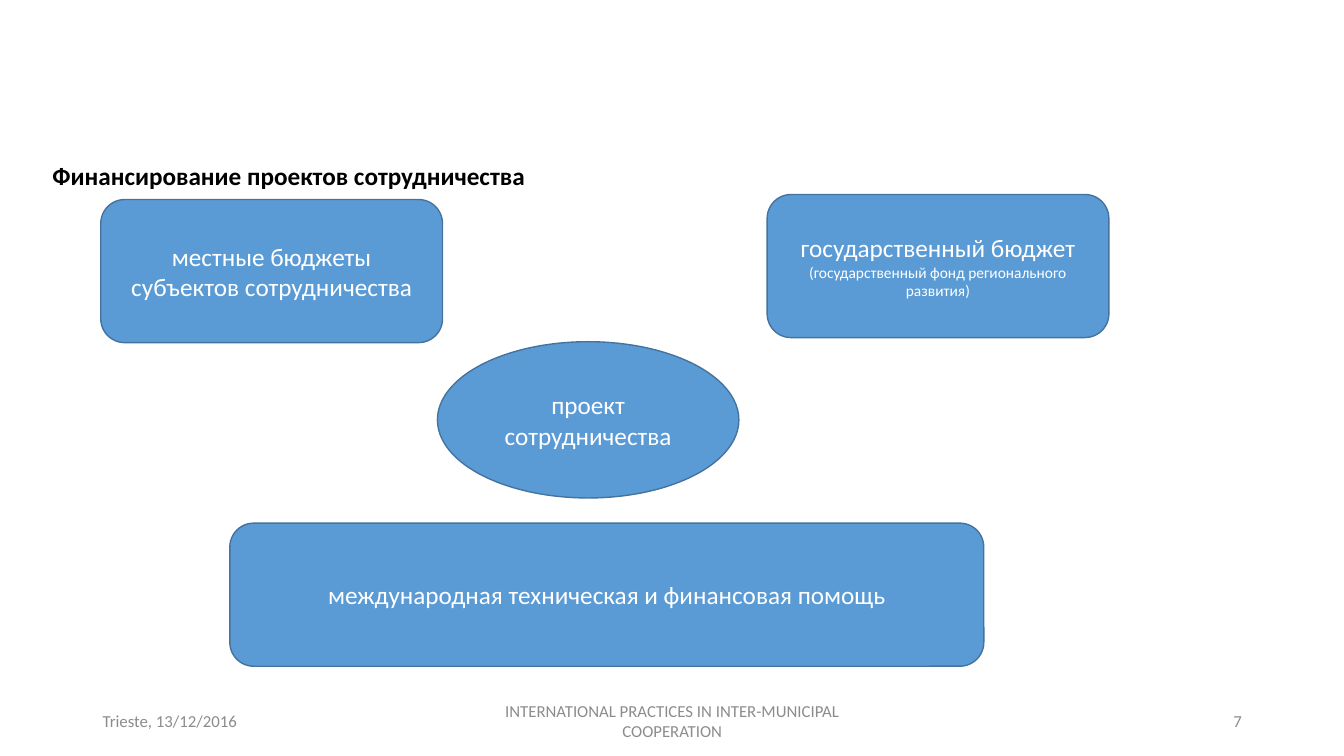
from dataclasses import dataclass

from pptx import Presentation
from pptx import util as u
from pptx.dml.color import RGBColor
from pptx.enum import shapes, text

WIDE, HIGH = u.Inches(13.333), u.Inches(7.5)
BLUE = RGBColor(0x5B, 0x9B, 0xD5)
EDGE = RGBColor(0x43, 0x73, 0x9E)
GREY = RGBColor(0x8C, 0x8C, 0x8C)
WHITE = RGBColor(0xFF, 0xFF, 0xFF)
BLACK = RGBColor(0, 0, 0)
FONT = "Calibri"
ROUND = shapes.MSO_SHAPE.ROUNDED_RECTANGLE
OVAL = shapes.MSO_SHAPE.OVAL
ALIGN = text.PP_ALIGN
MID = text.MSO_ANCHOR.MIDDLE
BOX_W, BOX_H = 25.43, 18.93
LINE_H = 5.33
FOOT_X, FOOT_Y, FOOT_GAP = 6.9, 92.67, 3.75


@dataclass(frozen=True)
class Area:
    x: float
    y: float
    w: float
    h: float

    def place(self) -> tuple[int, int, int, int]:
        return (int(WIDE * self.x / 100), int(HIGH * self.y / 100),
                int(WIDE * self.w / 100), int(HIGH * self.h / 100))


@dataclass(frozen=True)
class Line:
    words: str
    size: float = 18


@dataclass(frozen=True)
class Node:
    kind: shapes.MSO_SHAPE
    area: Area
    lines: tuple[Line, ...]


@dataclass(frozen=True)
class Foot:
    words: str
    width: float
    align: text.PP_ALIGN


NODES = (
    Node(ROUND, Area(7.5, 26.4, BOX_W, BOX_H),
         (Line("местные бюджеты субъектов сотрудничества"),)),
    Node(ROUND, Area(57.08, 25.73, BOX_W, BOX_H),
         (Line("государственный бюджет"),
          Line("(государственный фонд регионального развития)", 11))),
    Node(OVAL, Area(32.55, 45.2, 22.43, 20.67),
         (Line("проект сотрудничества"),)),
    Node(ROUND, Area(17.1, 69.2, 56.1, BOX_H),
         (Line("международная техническая и финансовая помощь"),)),
)

FEET = (
    Foot("Trieste, 13/12/2016", 22.5, ALIGN.LEFT),
    Foot("INTERNATIONAL PRACTICES IN INTER-MUNICIPAL COOPERATION", 33.75, ALIGN.CENTER),
    Foot("7", 22.5, ALIGN.RIGHT),
)


def write(frame, lines: tuple[Line, ...], color: RGBColor, align: text.PP_ALIGN,
          anchor: text.MSO_ANCHOR = MID, bold: bool = False) -> None:
    frame.word_wrap = True
    frame.auto_size = text.MSO_AUTO_SIZE.NONE
    frame.vertical_anchor = anchor
    frame.text = "\n".join(line.words for line in lines)
    for para, line in zip(frame.paragraphs, lines):
        para.alignment = align
        font = para.font
        font.name, font.size, font.bold = FONT, u.Pt(line.size), bold
        font.color.rgb = color


def draw_title(slide, words: str, area: Area) -> None:
    title = slide.shapes.title
    title.left, title.top, title.width, title.height = area.place()
    write(title.text_frame, (Line(words),), BLACK, ALIGN.LEFT,
          text.MSO_ANCHOR.TOP, True)


def draw_node(slide, node: Node) -> None:
    shape = slide.shapes.add_shape(node.kind, *node.area.place())
    shape.shadow.inherit = False
    shape.fill.solid()
    shape.fill.fore_color.rgb = BLUE
    shape.line.color.rgb = EDGE
    shape.line.width = u.Pt(1)
    write(shape.text_frame, node.lines, WHITE, ALIGN.CENTER)


def draw_feet(slide, feet: tuple[Foot, ...]) -> None:
    x = FOOT_X
    for foot in feet:
        area = Area(x, FOOT_Y, foot.width, LINE_H)
        box = slide.shapes.add_textbox(*area.place())
        write(box.text_frame, (Line(foot.words, 12),), GREY, foot.align)
        x += foot.width + FOOT_GAP


def main() -> None:
    deck = Presentation()
    deck.slide_width, deck.slide_height = WIDE, HIGH
    slide = deck.slides.add_slide(deck.slide_layouts[5])
    draw_feet(slide, FEET)
    draw_title(slide, "Финансирование проектов сотрудничества",
               Area(3.15, 20.53, 42.53, LINE_H))
    for node in NODES:
        draw_node(slide, node)
    deck.save("out.pptx")


if __name__ == "__main__":
    main()
